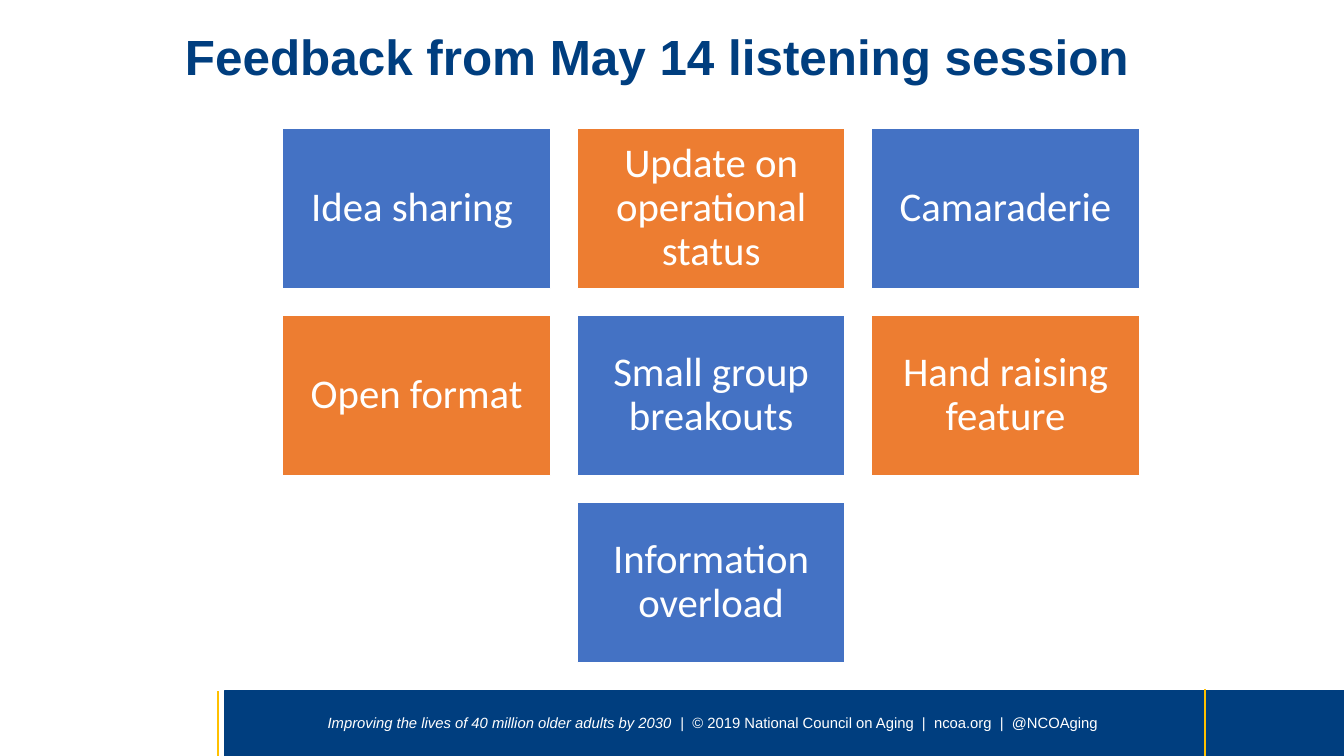
import pptx
import pptx.util
import pptx.dml.color
import pptx.enum.shapes
import pptx.enum.text
import lxml.etree

Inches = pptx.util.Inches
Pt = pptx.util.Pt
NAVY, GOLD, WHITE = "003E7F", "FFC000", "FFFFFF"
FILLS = ["4472C4", "ED7D31"]
TOPICS = ["Idea sharing ", "Update on operational status", "Camaraderie",
          "Open format", "Small group breakouts", "Hand raising feature",
          "Information overload"]


def paint(color, value):
    color.rgb = pptx.dml.color.RGBColor.from_string(value)


def style(frame, size, font, color, insets, bold=False):
    """Centre a frame's text and format its runs."""
    frame.word_wrap = True
    frame.auto_size = pptx.enum.text.MSO_AUTO_SIZE.NONE
    frame.vertical_anchor = pptx.enum.text.MSO_ANCHOR.MIDDLE
    (frame.margin_left, frame.margin_top,
     frame.margin_right, frame.margin_bottom) = [Inches(n) for n in insets]
    for para in frame.paragraphs:
        para.alignment = pptx.enum.text.PP_ALIGN.CENTER
        para.line_spacing = 0.9
        for run in para.runs:
            run.font.size = Pt(size)
            run.font.name = font
            run.font.bold = bold
            paint(run.font.color, color)


def add_box(slide, left, top, width, height, fill, edge):
    box = slide.shapes.add_shape(
        pptx.enum.shapes.MSO_SHAPE.RECTANGLE,
        Inches(left), Inches(top), Inches(width), Inches(height))
    box.shadow.inherit = False
    box.fill.solid()
    paint(box.fill.fore_color, fill)
    paint(box.line.color, edge)
    box.line.width = Pt(1)
    return box


def add_rule(slide, x, top, end):
    rule = slide.shapes.add_connector(
        pptx.enum.shapes.MSO_CONNECTOR.STRAIGHT,
        Inches(x), Inches(top), Inches(x), Inches(end))
    paint(rule.line.color, GOLD)
    rule.line.width = Pt(2)
    props = rule._element.spPr
    lxml.etree.SubElement(props, pptx.oxml.ns.qn("a:effectLst"))


def add_footer(slide, left, top, width, height):
    # Band and its two gold rules
    add_box(slide, left, top, width, height, NAVY, NAVY)
    add_rule(slide, left + 11.03, top - 0.02, top + height)
    add_rule(slide, left - 0.07, top, top + height)

    # Motto in italics, then the copyright line
    note = slide.shapes.add_textbox(
        Inches(left + 0.87), Inches(top), Inches(9.3), Inches(height))
    para = note.text_frame.paragraphs[0]
    motto, legal = para.add_run(), para.add_run()
    motto.text = "Improving the lives of 40 million older adults by 2030  "
    legal.text = "|  © 2019 National Council on Aging  |  ncoa.org  |  @NCOAging "
    style(note.text_frame, 12, "Arial", WHITE, (0.11, 0.06, 0.11, 0.06))
    motto.font.italic = True


def add_title(slide, left, top, width, height):
    title = slide.shapes.title
    title.left, title.top = Inches(left), Inches(top)
    title.width, title.height = Inches(width), Inches(height)
    title.text_frame.text = "Feedback from May 14 listening session"
    # The wider right inset moves the centred title a little to the left
    style(title.text_frame, 40, "Arial", NAVY, (0.1, 0.05, 0.4, 0.05), True)


def add_grid(slide, left, top, width, height, cols=3, gap=0.3):
    rows = -(-len(TOPICS) // cols)
    wide = (width - gap * (cols - 1)) / cols
    high = (height - gap * (rows - 1)) / rows
    for i, topic in enumerate(TOPICS):
        row, col = divmod(i, cols)
        # A short last row is centred
        count = min(cols, len(TOPICS) - row * cols)
        col += (cols - count) / 2
        card = add_box(slide, left + col * (wide + gap),
                       top + row * (high + gap), wide, high,
                       FILLS[i % 2], WHITE)
        card.text_frame.text = topic
        style(card.text_frame, 33, "Calibri", WHITE, [0.14] * 4)


def main():
    deck = pptx.Presentation()
    deck.slide_width, deck.slide_height = Inches(15.11), Inches(8.5)
    slide = deck.slides.add_slide(deck.slide_layouts[5])
    add_footer(slide, 2.52, 7.77, 12.59, 0.73)
    add_title(slide, 1.11, 0.06, 12.85, 1.21)
    add_grid(slide, 3.18, 1.44, 9.63, 6.01)
    deck.save("out.pptx")


if __name__ == "__main__":
    main()
